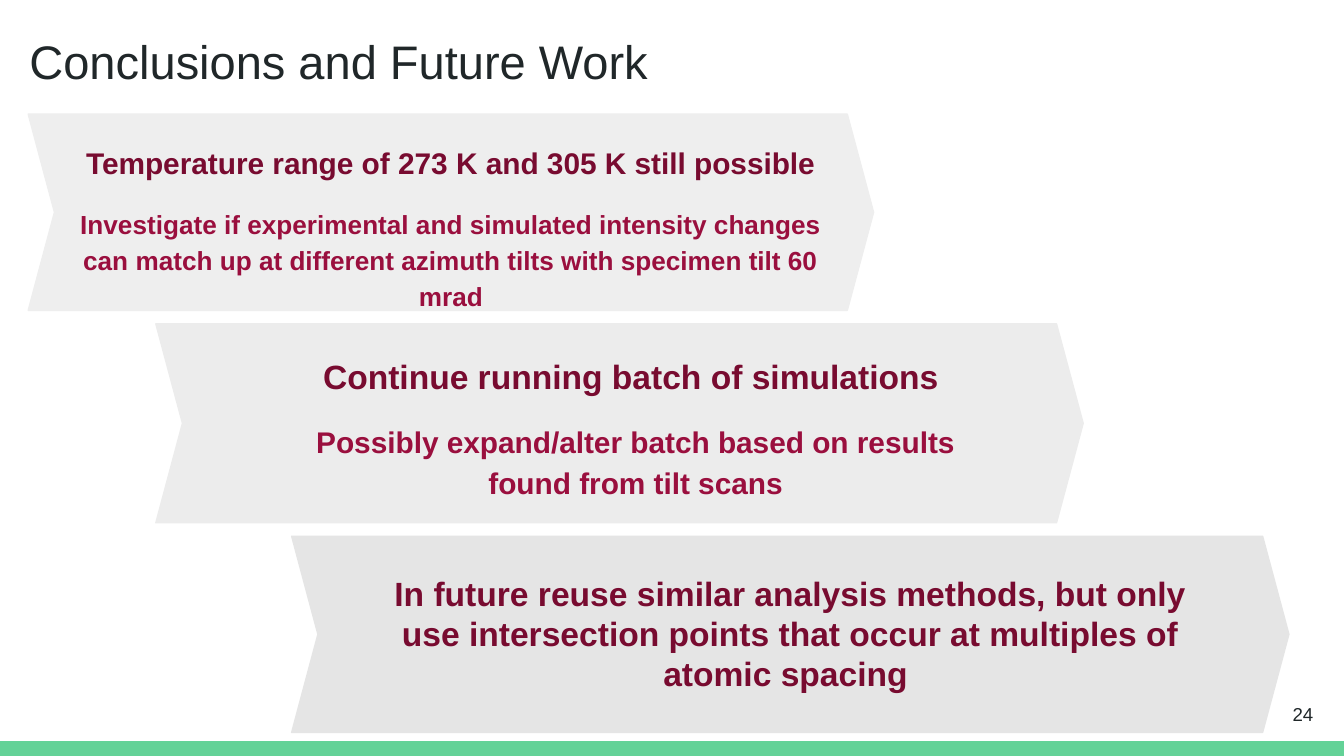
"""Build the conclusions slide: three stepped chevrons with centred text."""
from pptx import Presentation
from pptx.dml.color import RGBColor
from pptx.enum.shapes import MSO_SHAPE as Preset
from pptx.enum.text import MSO_ANCHOR as Anchor, PP_ALIGN as Align
from pptx.util import Inches, Pt

THEME = {
    "font": "Arial",
    "ink": "202729",
    "heading": "780B30",
    "detail": "9A0F3E",
    "footer": "63D297",
    "title_size": 25.2,
    "number_size": 10,
    "inset": 0.1,
    "chevron_point": 0.134,
}

SLIDE_WIDTH = 10
SLIDE_HEIGHT = SLIDE_WIDTH * 9 / 16
FOOTER_HEIGHT = 0.11

TITLE = "Conclusions and Future Work"
PAGE_NUMBER = "24"
STEPS = [
    {
        "chevron": (0.21, 0.85, 6.29, 1.46), "fill": "EEEEEE",
        "text_box": (0.32, 0.94, 6.07, 1.19), "spacing": 1.15,
        "lines": [
            ("Temperature range of 273 K and 305 K still possible", 16),
            ("Investigate if experimental and simulated intensity changes can "
             "match up at different azimuth tilts with specimen tilt 60 mrad", 14),
        ],
    },
    {
        "chevron": (1.16, 2.41, 6.9, 1.48), "fill": "ECECEC",
        "text_box": (1.94, 2.5, 5.58, 1.3), "spacing": 1.15,
        "lines": [
            ("Continue running batch of simulations ", 18),
            ("Possibly expand/alter batch based on results found from tilt scans", 16),
        ],
    },
    {
        "chevron": (2.17, 3.99, 7.42, 1.46), "fill": "E5E5E5",
        "text_box": (2.81, 4.16, 6.14, 1.11), "spacing": 1.0,
        "lines": [
            ("In future reuse similar analysis methods, but only use intersection "
             "points that occur at multiples of atomic spacing ", 18),
        ],
    },
]


def apply(target, values):
    for name, value in values.items():
        setattr(target, name, value)


def add_block(slide, preset, box, color):
    shape = slide.shapes.add_shape(preset, *map(Inches, box))
    shape.shadow.inherit = False
    shape.fill.solid()
    shape.fill.fore_color.rgb = RGBColor.from_string(color)
    shape.line.color.rgb = RGBColor.from_string(color)
    shape.line.width = Pt(0.75)
    return shape


def add_text(slide, box, lines, anchor=Anchor.TOP):
    frame = slide.shapes.add_textbox(*map(Inches, box)).text_frame
    margins = ("margin_left", "margin_top", "margin_right", "margin_bottom")
    apply(frame, {"word_wrap": True, "vertical_anchor": anchor,
                  **dict.fromkeys(margins, Inches(THEME["inset"]))})
    for index, (text, size, color, bold, layout) in enumerate(lines):
        paragraph = frame.add_paragraph() if index else frame.paragraphs[0]
        apply(paragraph, layout)
        run = paragraph.add_run()
        run.text = text
        apply(run.font, {"name": THEME["font"], "size": Pt(size), "bold": bold})
        run.font.color.rgb = RGBColor.from_string(THEME[color])


def add_step_text(slide, step):
    lines = []
    for index, (text, size) in enumerate(step["lines"]):
        layout = {"alignment": Align.CENTER, "line_spacing": step["spacing"]}
        if index:
            layout.update(space_before=Pt(12), space_after=Pt(12))
        lines.append((text, size, "detail" if index else "heading", True, layout))
    add_text(slide, step["text_box"], lines)


def main():
    presentation = Presentation()
    apply(presentation, {"slide_width": Inches(SLIDE_WIDTH),
                         "slide_height": Inches(SLIDE_HEIGHT)})
    slide = presentation.slides.add_slide(presentation.slide_layouts[6])

    footer_box = (0, SLIDE_HEIGHT - FOOTER_HEIGHT, SLIDE_WIDTH, FOOTER_HEIGHT)
    footer = add_block(slide, Preset.RECTANGLE, footer_box, THEME["footer"])
    footer.line.fill.background()
    for step in reversed(STEPS):
        chevron = add_block(slide, Preset.CHEVRON, step["chevron"], step["fill"])
        chevron.adjustments[0] = THEME["chevron_point"]

    add_text(slide, (0.12, 0.14, 9.32, 0.63),
             [(TITLE, THEME["title_size"], "ink", False, {"alignment": Align.LEFT})])
    add_text(slide, (9.27, 5.1, 0.6, 0.43),
             [(PAGE_NUMBER, THEME["number_size"], "ink", False, {"alignment": Align.RIGHT})],
             Anchor.MIDDLE)
    for step in STEPS:
        add_step_text(slide, step)

    presentation.save("out.pptx")


if __name__ == "__main__":
    main()
